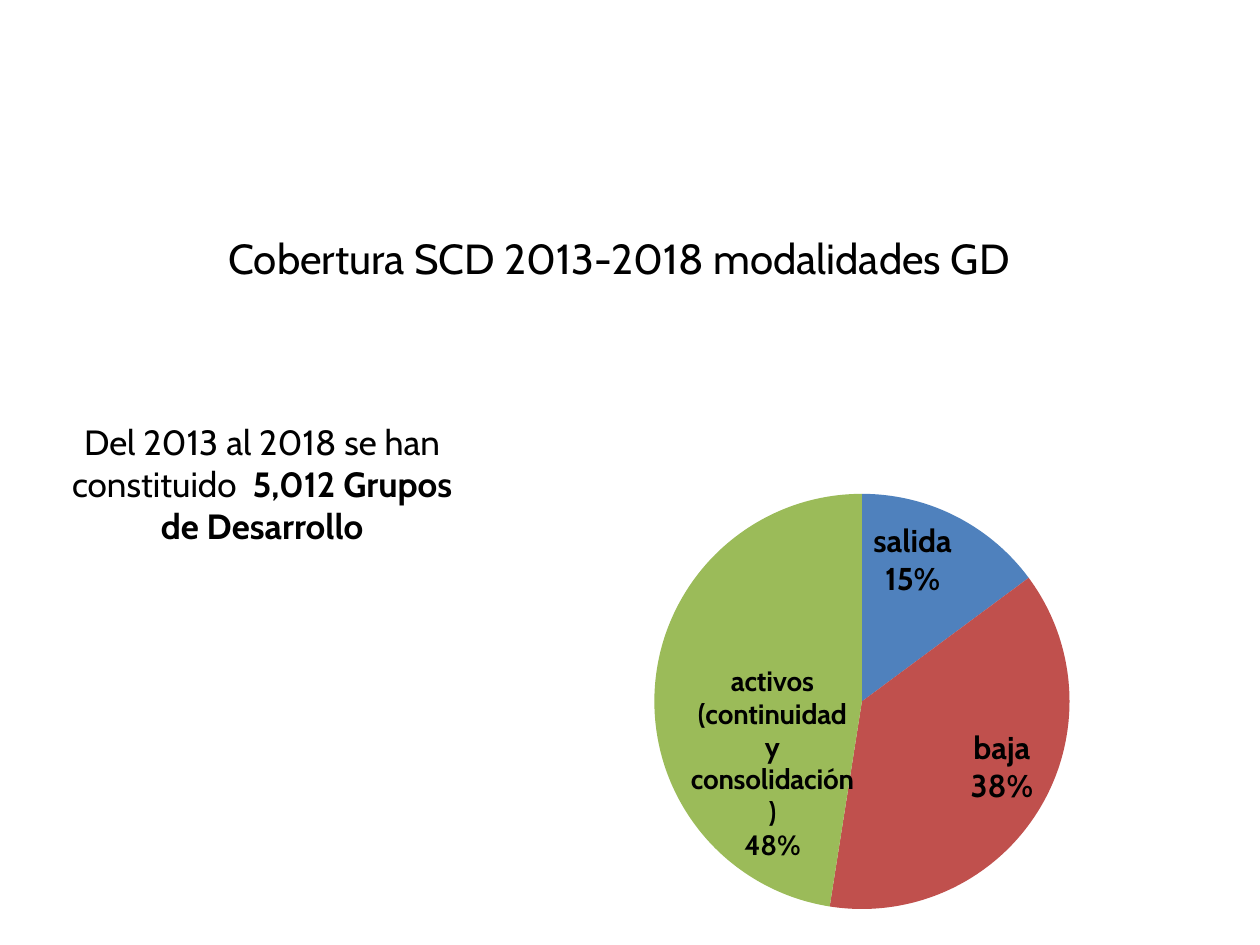
import pptx
import pptx.chart.data
import pptx.dml.color
import pptx.enum.chart
import pptx.enum.text
import pptx.oxml
import pptx.oxml.ns
import pptx.util
from pptx.util import Pt


def colour(value):
    return pptx.dml.color.RGBColor.from_string(value)


class SlideBuilder:
    font_name = "Cabin"
    ink = "000000"

    def __init__(self, page):
        self.page = page

    def style(self, font, size, bold=None):
        font.name = self.font_name
        font.size = Pt(size)
        font.color.rgb = colour(self.ink)
        if bold is not None:
            font.bold = bold

    def text(self, left, top, width, height, spans, size, anchor):
        """Add a centred paragraph made of (words, bold) spans."""
        box = self.page.shapes.add_textbox(Pt(left), Pt(top), Pt(width), Pt(height))
        frame = box.text_frame
        frame.word_wrap = True
        frame.vertical_anchor = anchor
        para = frame.paragraphs[0]
        para.alignment = pptx.enum.text.PP_ALIGN.CENTER
        self.style(para.font, size)
        for words, bold in spans:
            span = para.add_run()
            span.text = words
            if bold:
                span.font.bold = True

    def layout(self, parent, position, target=None, **values):
        """Place a chart part by fractions of the chart area."""
        for old in parent.findall(pptx.oxml.ns.qn("c:layout")):
            parent.remove(old)
        parts = [("layoutTarget", target)] if target else []
        if target:
            parts += [("xMode", "edge"), ("yMode", "edge")]
        parts += values.items()
        inner = "".join(f'<c:{name} val="{value}"/>' for name, value in parts)
        parent.insert(position, pptx.oxml.parse_xml(
            f'<c:layout {pptx.oxml.ns.nsdecls("c")}>'
            f"<c:manualLayout>{inner}</c:manualLayout></c:layout>"))

    def label_lines(self, element):
        """Show category and percent on separate lines."""
        flags = {"c:showVal": "0", "c:showCatName": "1", "c:showPercent": "1"}
        for name, value in flags.items():
            element.find(pptx.oxml.ns.qn(name)).set("val", value)
        separator = pptx.oxml.parse_xml(
            f'<c:separator {pptx.oxml.ns.nsdecls("c")}>\n</c:separator>')
        last = element.find(pptx.oxml.ns.qn("c:showBubbleSize"))
        if last is None:
            last = element.find(pptx.oxml.ns.qn("c:showPercent"))
        last.addnext(separator)

    def pie(self, left, top, width, height, shares, fills):
        data = pptx.chart.data.CategoryChartData()
        data.categories = list(shares)
        data.add_series("Series 1", list(shares.values()))
        chart = self.page.shapes.add_chart(
            pptx.enum.chart.XL_CHART_TYPE.PIE,
            Pt(left), Pt(top), Pt(width), Pt(height), data).chart
        chart.has_legend = False
        chart.has_title = False
        chart.font.name = "Calibri"
        chart.font.size = Pt(10)
        chart.font.color.rgb = colour(self.ink)
        plot = chart.plots[0]
        plot.vary_by_categories = True
        series = plot.series[0]
        for index, fill in enumerate(fills):
            area = series.points[index].format.fill
            area.solid()
            area.fore_color.rgb = colour(fill)

        # Labels shared by the slices
        labels = series.data_labels
        labels.show_percentage = True
        labels.show_category_name = True
        labels.show_value = False
        labels.position = pptx.enum.chart.XL_LABEL_POSITION.INSIDE_END
        self.style(labels.font, 18, True)
        self.label_lines(labels._element)

        # The long last label is smaller and moved down
        last = len(fills) - 1
        label = series.points[last].data_label
        self.style(label.font, 16, True)
        label.position = pptx.enum.chart.XL_LABEL_POSITION.INSIDE_END
        element = labels._element.find(pptx.oxml.ns.qn("c:dLbl"))
        self.label_lines(element)
        self.layout(element, 1, x=0.03, y=0.15)

        # Pie position within the chart
        area = chart._chartSpace.find(".//" + pptx.oxml.ns.qn("c:plotArea"))
        self.layout(area, 0, "inner", x=0.36, y=0.17, w=0.44, h=0.8)


def main():
    deck = pptx.Presentation()
    deck.slide_width, deck.slide_height = Pt(720), Pt(540)
    builder = SlideBuilder(deck.slides.add_slide(deck.slide_layouts[6]))
    anchors = pptx.enum.text.MSO_ANCHOR

    # Title
    builder.text(26.6, 111.6, 654.5, 71.3,
                 [("Cobertura SCD 2013-2018 modalidades GD", False)],
                 24, anchors.MIDDLE)

    # Status of the groups
    builder.pie(178.6, 231.8, 541.4, 296.6,
                {"salida": 15, "baja": 38,
                 "activos (continuidad y consolidación)": 48},
                ["4F81BD", "C0504D", "9BBB59"])

    # Summary
    builder.text(31.7, 236.9, 236.2, 116.6,
                 [("Del 2013 al 2018 se han constituido  ", False),
                  ("5,012 Grupos de Desarrollo", True)],
                 20, anchors.TOP)

    deck.save("out.pptx")


if __name__ == "__main__":
    main()
